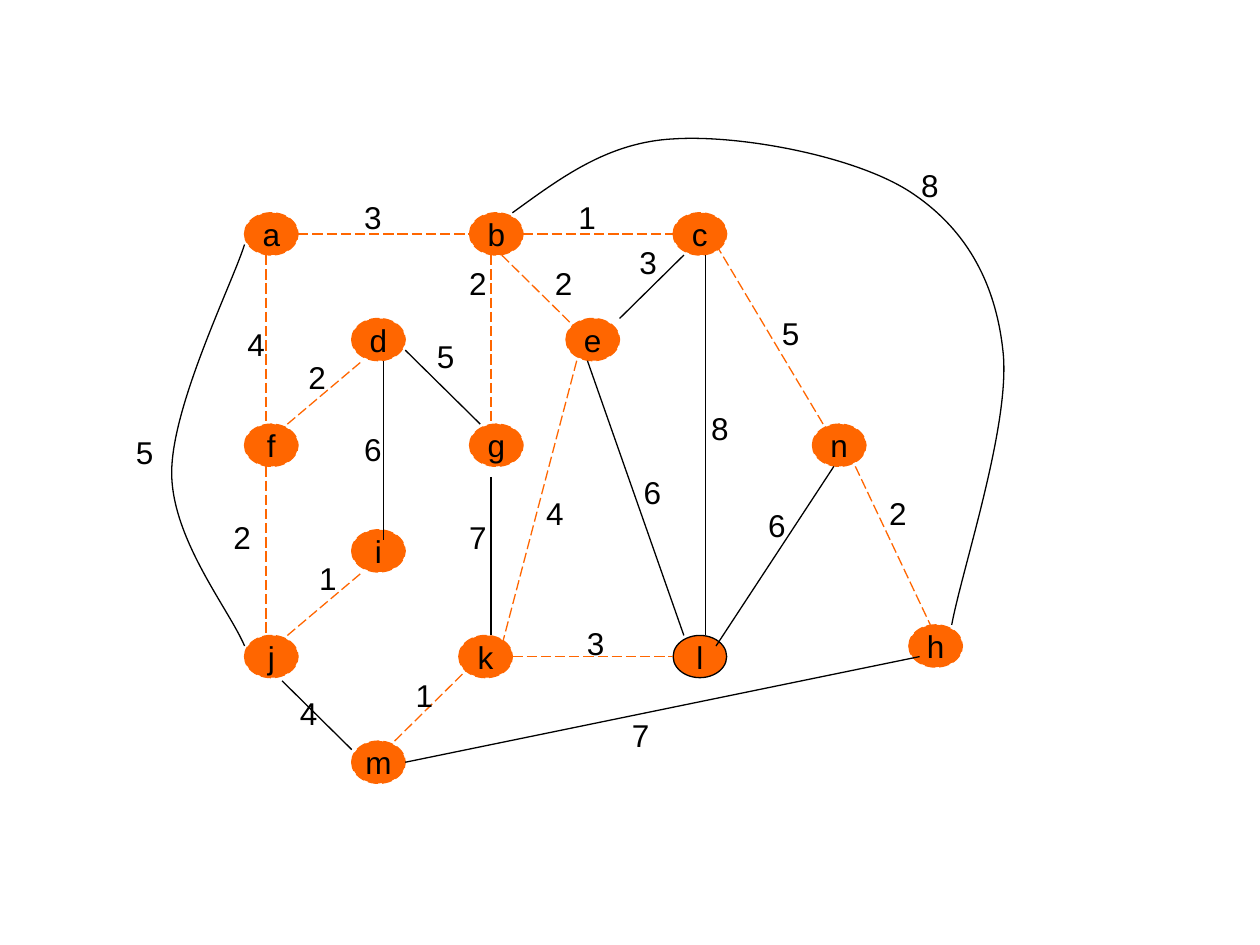
"""Draw a weighted graph with its minimum spanning tree as dashed orange edges."""
from lxml.etree import SubElement
from pptx import Presentation
from pptx.dml.color import RGBColor
from pptx.enum.dml import MSO_LINE
from pptx.enum.shapes import MSO_CONNECTOR, MSO_SHAPE
from pptx.enum.text import MSO_ANCHOR, PP_ALIGN
from pptx.oxml.ns import qn
from pptx.util import Cm, Pt

ORANGE = RGBColor(0xFF, 0x66, 0x00)
BLACK = RGBColor(0x00, 0x00, 0x00)

LEFT, TOP = 4.93, 4.29
COL, ROW = 2.16, 2.13
NODE_W, NODE_H = Cm(COL * 0.5), Cm(ROW * 0.4)
LABEL_W, LABEL_H = Cm(0.86), Cm(1.02)

NODES = {
    "a": (0, 0), "b": (2.1, 0), "c": (4, 0),
    "d": (1, 1), "e": (3, 1),
    "f": (0, 2), "g": (2.1, 2), "n": (5.3, 2),
    "i": (1, 3), "h": (6.2, 3.9),
    "j": (0, 4), "k": (2, 4), "l": (4, 4),
    "m": (1, 5),
}
SOLID_NODES = {"l"}

LEFT_SIDE, RIGHT_SIDE = (0, 0.2), (0.5, 0.2)
UPPER, LOWER = (0.2, 0), (0.2, 0.4)
UPPER_LEFT, UPPER_RIGHT = (0.1, 0), (0.4, 0)
LOWER_LEFT, LOWER_RIGHT = (0.1, 0.4), (0.4, 0.4)
INNER_LEFT, INNER_RIGHT = (0.1, 0.3), (0.4, 0.1)

TREE_EDGES = [
    ("a", RIGHT_SIDE, "b", LEFT_SIDE, "3", (1, -0.2)),
    ("b", RIGHT_SIDE, "c", LEFT_SIDE, "1", (3, -0.2)),
    ("n", LOWER_RIGHT, "h", UPPER, "2", (5.9, 2.6)),
    ("m", UPPER_RIGHT, "k", INNER_LEFT, "1", (1.48, 4.33)),
    ("a", LOWER, "f", UPPER, "4", (-0.09, 1)),
    ("f", LOWER, "j", UPPER, "2", (-0.22, 2.83)),
    ("j", UPPER_RIGHT, "i", LOWER_LEFT, "1", (0.58, 3.22)),
    ("f", UPPER_RIGHT, "d", LOWER_LEFT, "2", (0.48, 1.32)),
    ("b", (0.3, 0.4), "e", (0.1, 0.1), "2", (2.78, 0.43)),
    ("b", LOWER, "g", UPPER, "2", (1.98, 0.43)),
    ("c", (0.4, 0.3), "n", UPPER_LEFT, "5", (4.9, 0.9)),
    ("k", RIGHT_SIDE, "l", LEFT_SIDE, "3", (3.08, 3.83)),
    ("e", LOWER_LEFT, "k", INNER_RIGHT, "4", (2.7, 2.6)),
]
OTHER_EDGES = [
    ("j", (0.35, 0.43), "m", (0, 0.08), "4", (0.4, 4.5)),
    ("c", LOWER_LEFT, "e", (0.5, 0), "3", (3.57, 0.23)),
    ("c", (0.3, 0.4), "l", (0.3, 0), "8", (4.24, 1.8)),
    ("n", LOWER, "l", INNER_RIGHT, "6", (4.77, 2.72)),
    ("d", (0.3, 0.4), "i", (0.3, 0.1), "6", (1, 2)),
    ("d", (0.5, 0.3), "g", UPPER_LEFT, "5", (1.68, 1.12)),
    ("g", (0.2, 0.5), "k", (0.3, 0), "7", (1.98, 2.83)),
    ("e", LOWER, "l", UPPER_LEFT, "6", (3.61, 2.4)),
    ("m", RIGHT_SIDE, "h", INNER_LEFT, "7", (3.5, 4.7)),
]
CURVED_EDGES = [
    ("a", (0, 0.3), "j", (0, 0.1), "5", (-1.13, 2.03),
     [(-0.11, 0.66), (-0.68, 1.82), (-0.68, 2.46),
      (-0.68, 3.09), (-0.14, 3.76)]),
    ("b", UPPER_RIGHT, "h", UPPER_RIGHT, "8", (6.2, -0.5),
     [(2.95, -0.33), (3.39, -0.67), (4.01, -0.7),
      (4.62, -0.74), (5.69, -0.54), (6.21, -0.2),
      (6.71, 0.13), (7.01, 0.63), (7.08, 1.32),
      (7.15, 2), (6.7, 3.36)]),
]


def place(point):
    return Cm(LEFT + point[0] * COL), Cm(TOP + point[1] * ROW)


def port(name, offset):
    x, y = NODES[name]
    return place((x + offset[0], y + offset[1]))


def style_line(line, dashed):
    line.width = Pt(0.75)
    line.color.rgb = ORANGE if dashed else BLACK
    if dashed:
        line.dash_style = MSO_LINE.LONG_DASH


def write(sp, text, align):
    tf = sp.text_frame
    tf.text = text
    tf.word_wrap = False
    p = tf.paragraphs[0]
    p.alignment = align
    font = p.runs[0].font
    font.name, font.size = "Arial", Pt(18)
    font.color.rgb = BLACK


def add_node(shapes, name, point):
    sp = shapes.add_shape(MSO_SHAPE.OVAL, *place(point), NODE_W, NODE_H)
    sp.shadow.inherit = False
    sp.fill.solid()
    sp.fill.fore_color.rgb = ORANGE
    style_line(sp.line, name not in SOLID_NODES)
    write(sp, name, PP_ALIGN.CENTER)
    sp.text_frame.vertical_anchor = MSO_ANCHOR.MIDDLE


def add_edge(shapes, start, end, dashed):
    cx = shapes.add_connector(MSO_CONNECTOR.STRAIGHT, *start, *end)
    style_line(cx.line, dashed)
    SubElement(cx._element.spPr, qn("a:effectLst"))


def add_curve(shapes, start, bends, end):
    builder = shapes.build_freeform(*start)
    builder.add_line_segments([*map(place, bends), end], close=False)
    sp = builder.convert_to_shape()
    sp.shadow.inherit = False
    sp.fill.background()
    style_line(sp.line, False)
    outline = next(sp._element.iter(qn("a:path")))
    segments = outline.findall(qn("a:lnTo"))
    for i in range(0, len(segments), 3):
        bezier = SubElement(outline, qn("a:cubicBezTo"))
        for segment in segments[i:i + 3]:
            bezier.append(segment[0])
            outline.remove(segment)


def add_weight(shapes, weight, point):
    sp = shapes.add_textbox(*place(point), LABEL_W, LABEL_H)
    write(sp, weight, PP_ALIGN.LEFT)


def main():
    prs = Presentation()
    prs.slide_width, prs.slide_height = Cm(25.4), Cm(19.05)
    s = prs.slides.add_slide(prs.slide_layouts[6])
    shapes = s.shapes.add_group_shape().shapes
    for name, point in NODES.items():
        add_node(shapes, name, point)
    for edges, dashed in ((TREE_EDGES, True), (OTHER_EDGES, False)):
        for tail, leave, head, arrive, weight, label in edges:
            add_edge(shapes, port(tail, leave), port(head, arrive), dashed)
            add_weight(shapes, weight, label)
    for tail, leave, head, arrive, weight, label, bends in CURVED_EDGES:
        add_curve(shapes, port(tail, leave), bends, port(head, arrive))
        add_weight(shapes, weight, label)
    prs.save("out.pptx")


if __name__ == "__main__":
    main()
